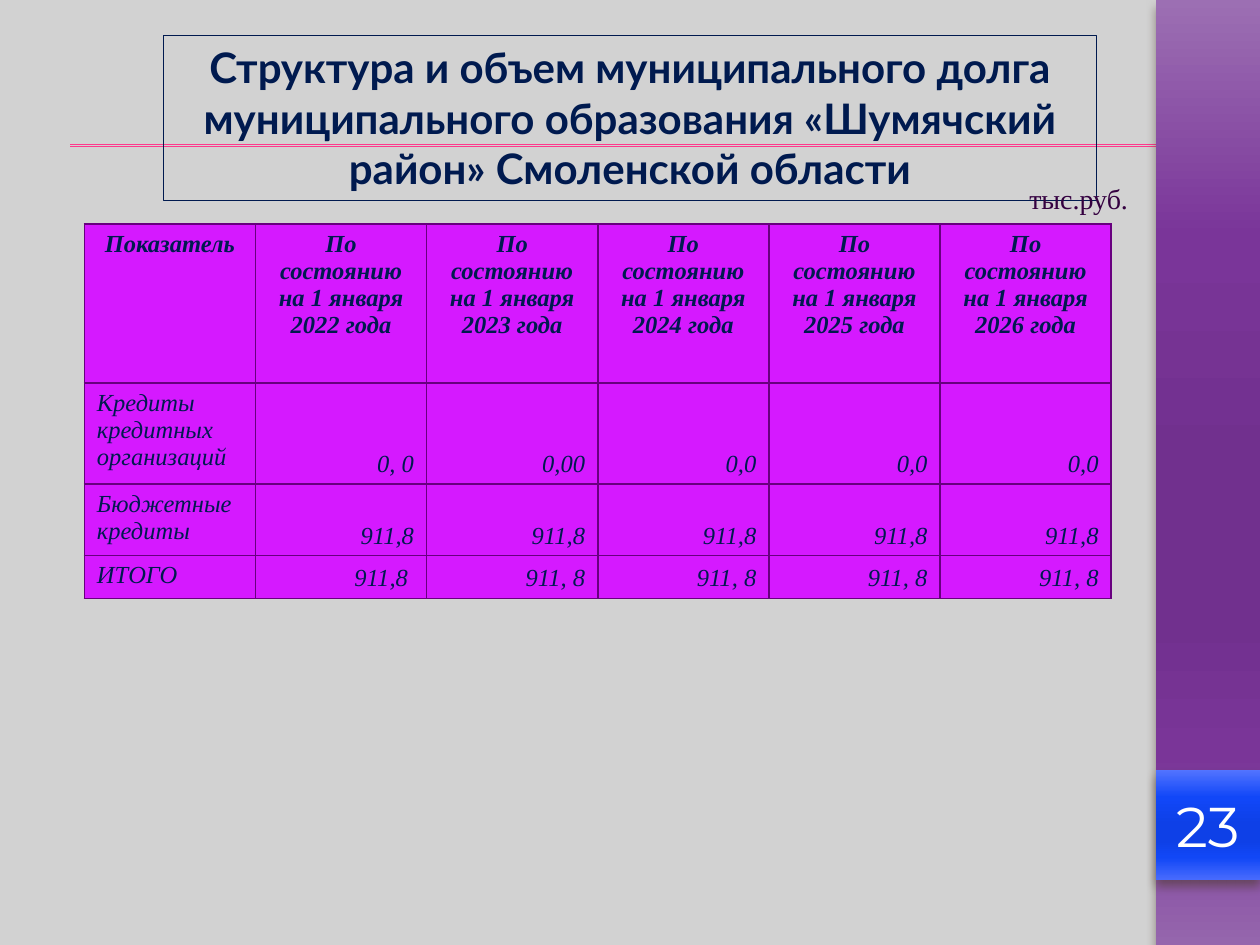
from lxml import etree
from pptx import Presentation
from pptx.dml.color import RGBColor
from pptx.enum.shapes import MSO_CONNECTOR, MSO_SHAPE
from pptx.enum.text import MSO_ANCHOR, MSO_AUTO_SIZE, PP_ALIGN
from pptx.oxml import parse_xml
from pptx.oxml.ns import nsdecls, qn
from pptx.util import Cm, Pt

COLORS = {
    "background": "D2D2D2", "rule": "FF388C", "navy": "001A4F", "unit": "340040",
    "cell": "D519FF", "border": "68007F", "white": "FFFFFF", "shadow": "4E3B30",
}
RGB = {name: RGBColor.from_string(value) for name, value in COLORS.items()}
STOPS = [0, 25, 50, 65, 80, 100]
PANELS = [
    (0, 19.05, ["9C6FB3", "7A3599", "71308E", "71308E", "7A3598", "9566AD"]),
    (15.52, 2.21, ["5374FF", "1147F8", "0E40E7", "0E40E7", "1147F6", "476AFD"]),
]
YEARS = [2022, 2023, 2024, 2025, 2026]
ROWS = [
    ["Показатель"] + [f"По состоянию на 1 января {year} года" for year in YEARS],
    ["Кредиты кредитных организаций", "0, 0", "0,00", "0,0", "0,0", "0,0"],
    ["Бюджетные кредиты"] + ["911,8"] * 5,
    ["ИТОГО", "911,8 "] + ["911, 8"] * 4,
]
ROW_HEIGHTS = [3.2, 2.04, 1.43, 0.86]


def write(tf, text, size=14, font="Times New Roman", color="navy",
          bold=False, italic=False, align=PP_ALIGN.LEFT):
    p = tf.paragraphs[0]
    p.alignment = align
    r = p.add_run()
    r.text = text
    r.font.size = Pt(size)
    r.font.name = font
    r.font.bold = bold
    r.font.italic = italic
    r.font.color.rgb = RGB[color]


prs = Presentation()
prs.slide_width = Cm(25.4)
prs.slide_height = Cm(19.05)
s = prs.slides.add_slide(prs.slide_layouts[6])
s.background.fill.solid()
s.background.fill.fore_color.rgb = RGB["background"]

for y in (2.92, 2.95):
    line = s.shapes.add_connector(MSO_CONNECTOR.STRAIGHT, Cm(1.42), Cm(y), Cm(25.4), Cm(y))
    line.line.color.rgb = RGB["rule"]
    line.line.width = Pt(0.75)
    etree.SubElement(line._element.spPr, qn("a:effectLst"))

for top, height, shades in PANELS:
    sp = s.shapes.add_shape(MSO_SHAPE.RECTANGLE, Cm(23.3), Cm(top), Cm(2.1), Cm(height))
    sp.line.fill.background()
    stops = "".join(
        f'<a:gs pos="{pos * 1000}"><a:srgbClr val="{shade}"/></a:gs>'
        for pos, shade in zip(STOPS, shades))
    sp._element.spPr.find(qn("a:prstGeom")).addnext(parse_xml(
        f'<a:gradFill {nsdecls("a")} rotWithShape="1"><a:gsLst>{stops}</a:gsLst>'
        '<a:lin ang="5400000" scaled="0"/></a:gradFill>'))
    sp._element.spPr.append(parse_xml(
        f'<a:effectLst {nsdecls("a")}><a:outerShdw blurRad="{Pt(6)}" dist="{Pt(4)}" '
        f'dir="5400000" algn="ctr" rotWithShape="0"><a:srgbClr val="{COLORS["shadow"]}">'
        '<a:alpha val="60000"/></a:srgbClr></a:outerShdw></a:effectLst>'))

tf = sp.text_frame
tf.word_wrap = True
tf.margin_left = tf.margin_right = 0
tf.vertical_anchor = MSO_ANCHOR.MIDDLE
write(tf, "23", size=32, font="Montserrat", color="white", align=PP_ALIGN.CENTER)

title = s.shapes.add_shape(MSO_SHAPE.RECTANGLE, Cm(3.3), Cm(0.72), Cm(18.8), Cm(3.33))
title.shadow.inherit = False
title.fill.background()
title.line.color.rgb = RGB["navy"]
title.line.width = Pt(0.75)
tf = title.text_frame
tf.word_wrap = True
tf.auto_size = MSO_AUTO_SIZE.SHAPE_TO_FIT_TEXT
tf.vertical_anchor = MSO_ANCHOR.TOP
write(tf, "Структура и объем муниципального долга муниципального образования "
      "«Шумячский район» Смоленской области",
      size=24, font="Lato", bold=True, align=PP_ALIGN.CENTER)

table = s.shapes.add_table(4, 6, Cm(1.7), Cm(4.52), Cm(20.7), Cm(sum(ROW_HEIGHTS))).table
for column in table.columns:
    column.width = Cm(3.45)
for i, (height, texts) in enumerate(zip(ROW_HEIGHTS, ROWS)):
    table.rows[i].height = Cm(height)
    for j, text in enumerate(texts):
        cell = table.cell(i, j)
        align = PP_ALIGN.CENTER if i == 0 else PP_ALIGN.RIGHT if j else PP_ALIGN.LEFT
        cell.vertical_anchor = MSO_ANCHOR.BOTTOM if i and j else MSO_ANCHOR.TOP
        write(cell.text_frame, text, bold=i == 0, italic=True, align=align)
        tcPr = cell._tc.get_or_add_tcPr()
        for side in ("lnL", "lnR", "lnT", "lnB"):
            tcPr.append(parse_xml(
                f'<a:{side} {nsdecls("a")} w="{Pt(1)}"><a:solidFill>'
                f'<a:srgbClr val="{COLORS["border"]}"/></a:solidFill></a:{side}>'))
        cell.fill.solid()
        cell.fill.fore_color.rgb = RGB["cell"]

unit = s.shapes.add_textbox(Cm(20.5), Cm(3.53), Cm(2.54), Cm(0.94))
unit.text_frame.word_wrap = False
unit.text_frame.auto_size = MSO_AUTO_SIZE.SHAPE_TO_FIT_TEXT
write(unit.text_frame, "тыс.руб.", size=16, color="unit")

prs.save("out.pptx")
